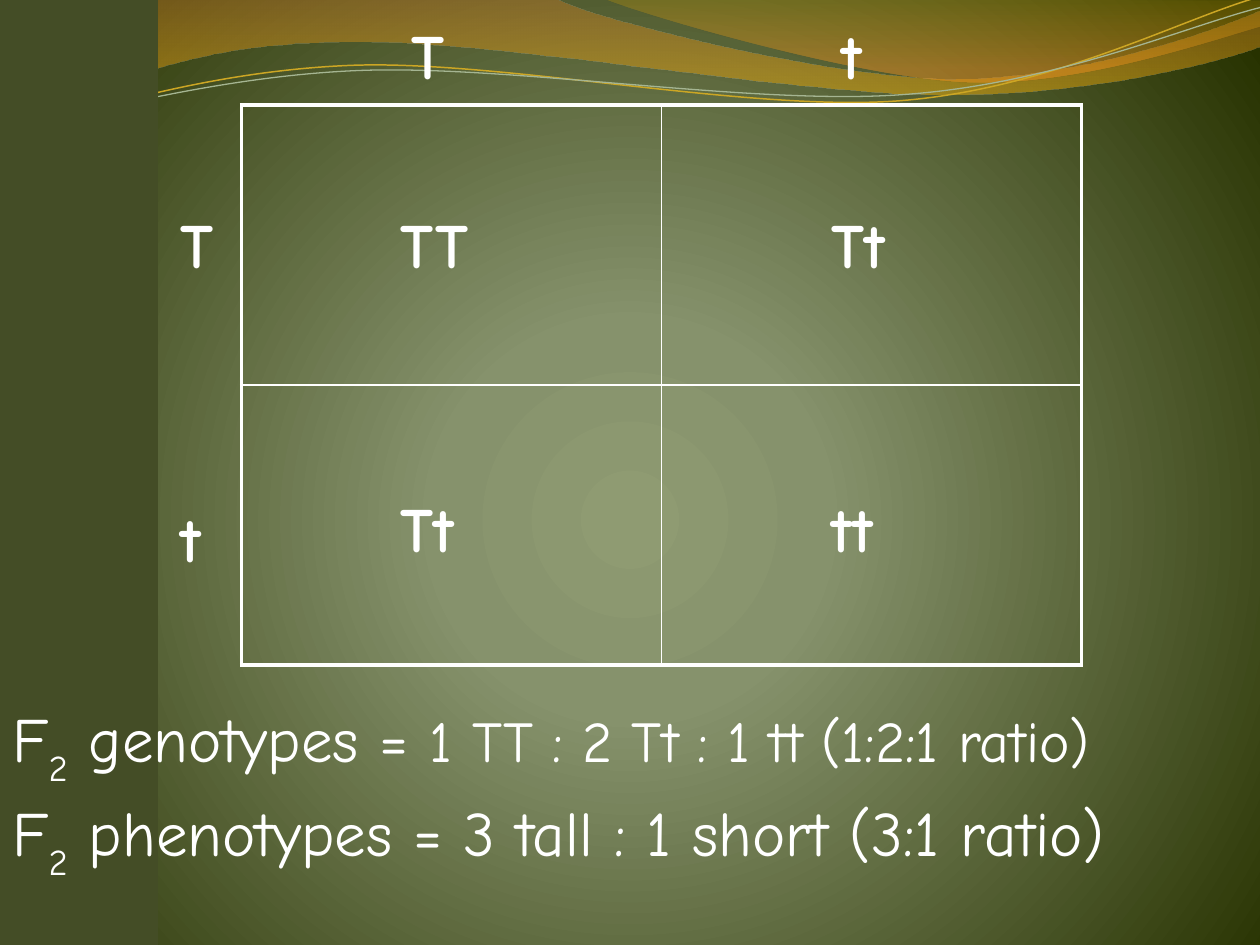
import itertools
from dataclasses import dataclass
from typing import Optional

import lxml.etree
import pptx
import pptx.dml.color
import pptx.enum.shapes
import pptx.enum.text
import pptx.oxml
import pptx.oxml.ns
import pptx.util

Pt = pptx.util.Pt
RGBColor = pptx.dml.color.RGBColor
qn = pptx.oxml.ns.qn

WHITE = RGBColor(0xFF, 0xFF, 0xFF)
MOSS = RGBColor(0x44, 0x4D, 0x26)
SAGE = RGBColor(0x8F, 0x9B, 0x72)
OLIVE = RGBColor(0x86, 0x92, 0x6C)
FOREST = RGBColor(0x27, 0x32, 0x00)
COPPER = RGBColor(0xC0, 0x7A, 0x28)
YELLOW = RGBColor(0xF7, 0xBF, 0x00)
MUSTARD = RGBColor(0xC0, 0x97, 0x09)
ORANGE = RGBColor(0xF5, 0x93, 0x20)
GOLD = RGBColor(0xCC, 0xA6, 0x24)
PALE_GREEN = RGBColor(0xA5, 0xB5, 0x92)

FONT = "Comic Neue"
TEXT_SIZE = 36
TEXT_HEIGHT = 50.4
OUTER_BORDER, INNER_BORDER = 2.25, 1
STRAND_TILT = 357.3


@dataclass
class Stop:
    position: int
    color: RGBColor
    opacity: int = 100


@dataclass
class Wave:
    """Segments hold one point for a straight line, three for a Bézier curve."""
    start: tuple
    segments: list
    stops: Optional[list] = None
    line_color: Optional[RGBColor] = None
    line_width: float = 0


@dataclass
class Piece:
    text: str
    size: float = TEXT_SIZE
    bold: bool = False
    subscript: bool = False


@dataclass
class Label:
    left: float
    top: float
    width: float
    pieces: list


def allele(left: float, top: float, width: float, text: str) -> Label:
    return Label(left, top, width, [Piece(text, bold=True)])


def ratio_line(top: float, *pieces: Piece) -> Label:
    return Label(0, top, 720, [Piece("F"), Piece("2", subscript=True), *pieces])


WAVES = [
    Wave((0, 0), [
        [(317, -1)],
        [(343, 12), (478, 45), (546, 45)],
        [(614, 45), (690, 19), (720, 6)],
        [(721, 26)],
        [(708, 32), (626, 55), (537, 54)],
        [(446, 54), (275, 20), (185, 24)],
        [(93, 26), (33, 60), (-1, 81)],
    ], stops=[Stop(0, COPPER, 45), Stop(100, YELLOW, 55)]),
    Wave((345, -1), [
        [(366, 8), (491, 45), (554, 47)],
        [(617, 49), (692, 23), (720, 15)],
        [(720, 0)],
    ], stops=[Stop(0, MUSTARD, 30), Stop(80, ORANGE, 45)]),
    Wave((-1.4, 63), [
        [(33.8, 51.7), (114.1, 29.4), (199.8, 29.9)],
        [(284.8, 30.3), (425.9, 67.3), (512.5, 64.9)],
        [(599.1, 62.4), (676.5, 25.7), (720.2, 15.5)],
    ], line_color=GOLD, line_width=0.85),
    Wave((-1.1, 58), [
        [(32.9, 53.8), (118.3, 32.5), (204.1, 33)],
        [(290.5, 33.4), (428.9, 63.8), (515.5, 61.4)],
        [(601.4, 59.6), (678.4, 30.1), (721.4, 21.3)],
    ], line_color=PALE_GREEN, line_width=0.75),
]

LABELS = [
    allele(228, 6, 48, "T"),
    allele(474, 6, 48, "t"),
    allele(96, 114, 48, "T"),
    allele(96, 282, 48, "t"),
    allele(222, 114, 72, "TT"),
    allele(468, 114, 72, "Tt"),
    allele(222, 276, 72, "Tt"),
    allele(468, 276, 72, "tt"),
    ratio_line(396, Piece(" genotypes = "),
               Piece("1 TT : 2 Tt : 1 tt (1:2:1 ratio)", size=33)),
    ratio_line(450, Piece(" phenotypes = 3 tall : 1 short (3:1 ratio)")),
]


def put_gradient(parent, stops: list, direction: str) -> None:
    """Swap the solid fill inside parent for a gradient."""
    gradient = pptx.oxml.parse_xml(
        f'<a:gradFill {pptx.oxml.ns.nsdecls("a")} rotWithShape="1">'
        f'<a:gsLst/>{direction}</a:gradFill>')
    for stop in stops:
        mark = lxml.etree.SubElement(gradient[0], qn("a:gs"), pos=str(stop.position * 1000))
        color = lxml.etree.SubElement(mark, qn("a:srgbClr"), val=str(stop.color))
        if stop.opacity < 100:
            lxml.etree.SubElement(color, qn("a:alpha"), val=str(stop.opacity * 1000))
    parent.replace(parent.find(qn("a:solidFill")), gradient)


def bend_segments(ribbon, segments: list) -> None:
    """Join each three line steps that stand for a curve into one Bézier step."""
    steps = iter(list(ribbon.element.iter(qn("a:lnTo"))))
    for segment in segments:
        first, *others = itertools.islice(steps, len(segment))
        if others:
            curve = lxml.etree.Element(qn("a:cubicBezTo"))
            first.addprevious(curve)
            for step in (first, *others):
                curve.append(step[0])
                step.getparent().remove(step)


def draw_wave(slide, wave: Wave) -> None:
    points = [(Pt(x), Pt(y)) for x, y in itertools.chain(*wave.segments)]
    builder = slide.shapes.build_freeform(Pt(wave.start[0]), Pt(wave.start[1]))
    builder.add_line_segments(points, close=wave.stops is not None)
    ribbon = builder.convert_to_shape()
    bend_segments(ribbon, wave.segments)
    ribbon.shadow.inherit = False
    if wave.stops:
        ribbon.fill.solid()
        put_gradient(ribbon.element.spPr, wave.stops, '<a:lin ang="5400000" scaled="1"/>')
        ribbon.line.fill.background()
    else:
        ribbon.rotation = STRAND_TILT
        ribbon.fill.background()
        ribbon.line.color.rgb = wave.line_color
        ribbon.line.width = Pt(wave.line_width)


def set_borders(cell, widths: dict) -> None:
    properties = cell._tc.get_or_add_tcPr()
    for index, side in enumerate("LRTB"):
        border = lxml.etree.Element(qn(f"a:ln{side}"), w=str(Pt(widths[side])))
        color_fill = lxml.etree.SubElement(border, qn("a:solidFill"))
        lxml.etree.SubElement(color_fill, qn("a:srgbClr"), val=str(WHITE))
        properties.insert(index, border)


def draw_punnett_square(slide) -> None:
    square = slide.shapes.add_table(2, 2, Pt(138), Pt(60), Pt(480), Pt(320)).table
    square.first_row = square.horz_banding = False
    for row, column in itertools.product(range(2), repeat=2):
        cell = square.cell(row, column)
        cell.fill.background()
        outer = {"L": column == 0, "R": column == 1, "T": row == 0, "B": row == 1}
        set_borders(cell, {side: OUTER_BORDER if is_outer else INNER_BORDER
                           for side, is_outer in outer.items()})


def draw_sidebar(slide) -> None:
    sidebar = slide.shapes.add_shape(pptx.enum.shapes.MSO_SHAPE.RECTANGLE,
                                     Pt(0), Pt(0), Pt(90), Pt(540))
    sidebar.shadow.inherit = False
    sidebar.fill.solid()
    sidebar.fill.fore_color.rgb = MOSS
    sidebar.line.color.rgb = MOSS
    sidebar.line.width = Pt(0.75)


def draw_label(slide, label: Label) -> None:
    frame = slide.shapes.add_textbox(Pt(label.left), Pt(label.top),
                                     Pt(label.width), Pt(TEXT_HEIGHT)).text_frame
    frame.word_wrap = True
    frame.auto_size = pptx.enum.text.MSO_AUTO_SIZE.SHAPE_TO_FIT_TEXT
    paragraph = frame.paragraphs[0]
    space_before = lxml.etree.SubElement(paragraph._p.get_or_add_pPr(), qn("a:spcBef"))
    lxml.etree.SubElement(space_before, qn("a:spcPct"), val="50000")
    for piece in label.pieces:
        run = paragraph.add_run()
        run.text = piece.text
        run.font.name = FONT
        run.font.size = Pt(piece.size)
        run.font.bold = piece.bold
        run.font.color.rgb = WHITE
        if piece.subscript:
            run._r.get_or_add_rPr().set("baseline", "-30000")


def main() -> None:
    deck = pptx.Presentation()
    deck.slide_width, deck.slide_height = Pt(720), Pt(540)
    slide = deck.slides.add_slide(deck.slide_layouts[6])
    slide.background.fill.solid()
    put_gradient(slide.element.find(f".//{qn('p:bgPr')}"),
                 [Stop(0, SAGE), Stop(25, OLIVE), Stop(100, FOREST)],
                 '<a:path path="circle"><a:fillToRect l="10000" t="110000" '
                 'r="10000" b="100000"/></a:path>')
    for wave in WAVES:
        draw_wave(slide, wave)
    draw_punnett_square(slide)
    draw_sidebar(slide)
    for label in LABELS:
        draw_label(slide, label)
    deck.save("out.pptx")


if __name__ == "__main__":
    main()
